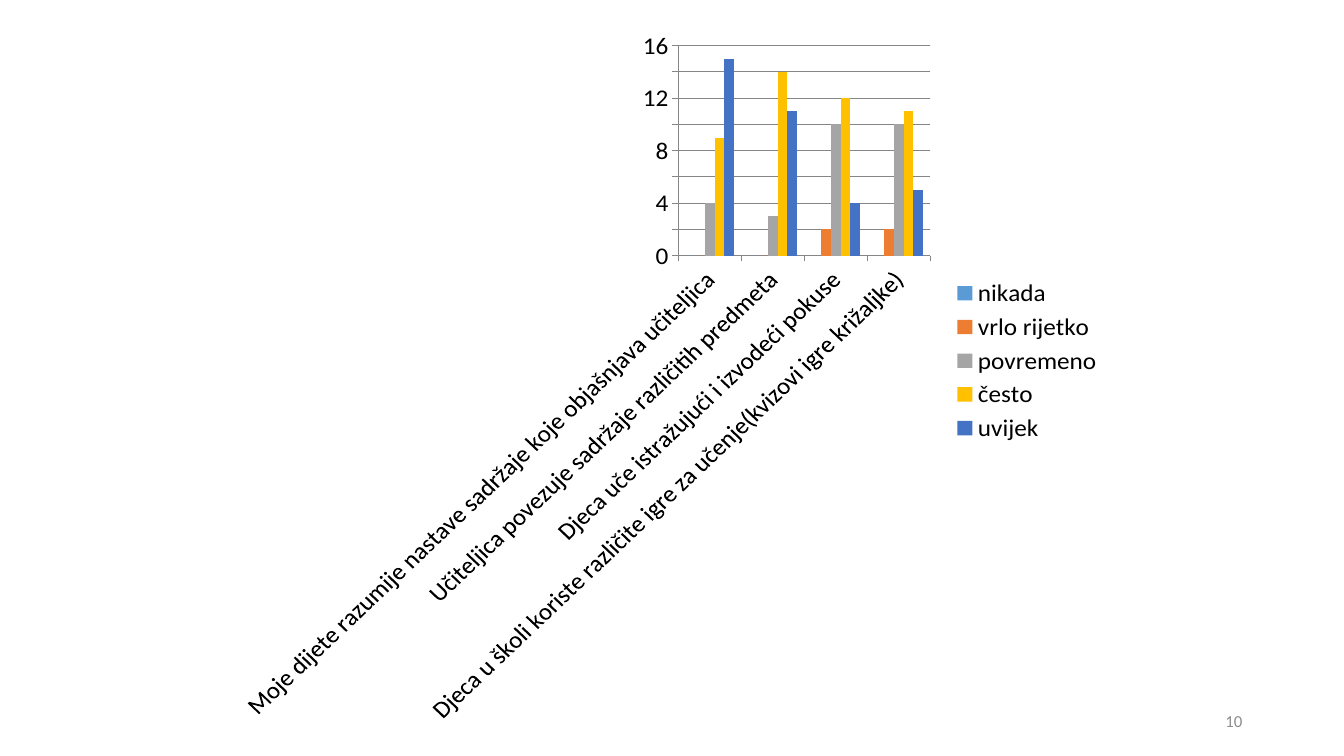
from pptx import Presentation
from pptx.chart.data import CategoryChartData
from pptx.dml.color import RGBColor
from pptx.enum.chart import XL_CHART_TYPE, XL_LEGEND_POSITION, XL_TICK_MARK
from pptx.enum.text import MSO_ANCHOR, PP_ALIGN
from pptx.util import Inches, Pt

COLUMN = XL_CHART_TYPE.COLUMN_CLUSTERED
RIGHT = XL_LEGEND_POSITION.RIGHT
OUT = XL_TICK_MARK.OUTSIDE
FONT = "Calibri"

CLAIMS = [
    "Moje dijete razumije nastave sadržaje koje objašnjava učiteljica",
    "Učiteljica povezuje sadržaje različitih predmeta",
    "Djeca uče istražujući i izvodeći pokuse",
    "Djeca u školi koriste različite igre za učenje(kvizovi igre križaljke)",
]
ANSWERS = [
    ("nikada", (0, 0, 0, 0), "5B9BD5"),
    ("vrlo rijetko", (0, 0, 2, 2), "ED7D31"),
    ("povremeno", (4, 3, 10, 10), "A5A5A5"),
    ("često", (9, 14, 12, 11), "FFC000"),
    ("uvijek", (15, 11, 4, 5), "4472C4"),
]
CHART_BOX = (2.22, 0.31, 8.82, 6.87)
PAGE_BOX = (9.42, 6.95, 3, 0.4)
PAGE = "10"


def style(font, size, color):
    font.name = FONT
    font.size = Pt(size)
    font.color.rgb = RGBColor.from_string(color)


def paint(fmt, color):
    fmt.fill.solid()
    fmt.fill.fore_color.rgb = RGBColor.from_string(color)


def add_answers(slide):
    data = CategoryChartData()
    data.categories = CLAIMS
    for name, counts, _ in ANSWERS:
        data.add_series(name, counts)
    chart = slide.shapes.add_chart(COLUMN, *map(Inches, CHART_BOX), data).chart
    style(chart.font, 18, "000000")
    chart.has_title = False
    chart.has_legend = True
    chart.legend.position = RIGHT
    chart.legend.include_in_layout = False

    plot = chart.plots[0]
    plot.gap_width = 150
    plot.overlap = 0
    plot.vary_by_categories = False
    for bars, (_, _, color) in zip(plot.series, ANSWERS):
        paint(bars.format, color)

    scale = chart.value_axis
    scale.minimum_scale, scale.maximum_scale, scale.major_unit = 0, 16, 2
    scale.has_major_gridlines = True
    lines = [scale.major_gridlines.format.line]
    for axis in (chart.category_axis, scale):
        axis.major_tick_mark = OUT
        style(axis.tick_labels.font, 18, "000000")
        lines.append(axis.format.line)
    for line in lines:
        line.color.rgb = RGBColor.from_string("868686")
        line.width = Pt(0.75)

    # Slant the long claims by 45 degrees (unit: 1/60000 degree)
    labels = chart.category_axis.tick_labels.font
    style(labels, 18, "000000")
    slant = chart.category_axis._element.find(".//{*}txPr/{*}bodyPr")
    slant.set("rot", str(-45 * 60000))
    slant.set("vert", "horz")


def add_page(slide):
    frame = slide.shapes.add_textbox(*map(Inches, PAGE_BOX)).text_frame
    frame.word_wrap = True
    frame.vertical_anchor = MSO_ANCHOR.MIDDLE
    para = frame.paragraphs[0]
    para.text = PAGE
    para.alignment = PP_ALIGN.RIGHT
    style(para.font, 12, "8C8C8C")


def main():
    deck = Presentation()
    deck.slide_width, deck.slide_height = Inches(13.33), Inches(7.5)
    slide = deck.slides.add_slide(deck.slide_layouts[6])
    paint(slide.background, "FFFFFF")
    add_answers(slide)
    add_page(slide)
    deck.save("out.pptx")


if __name__ == "__main__":
    main()
